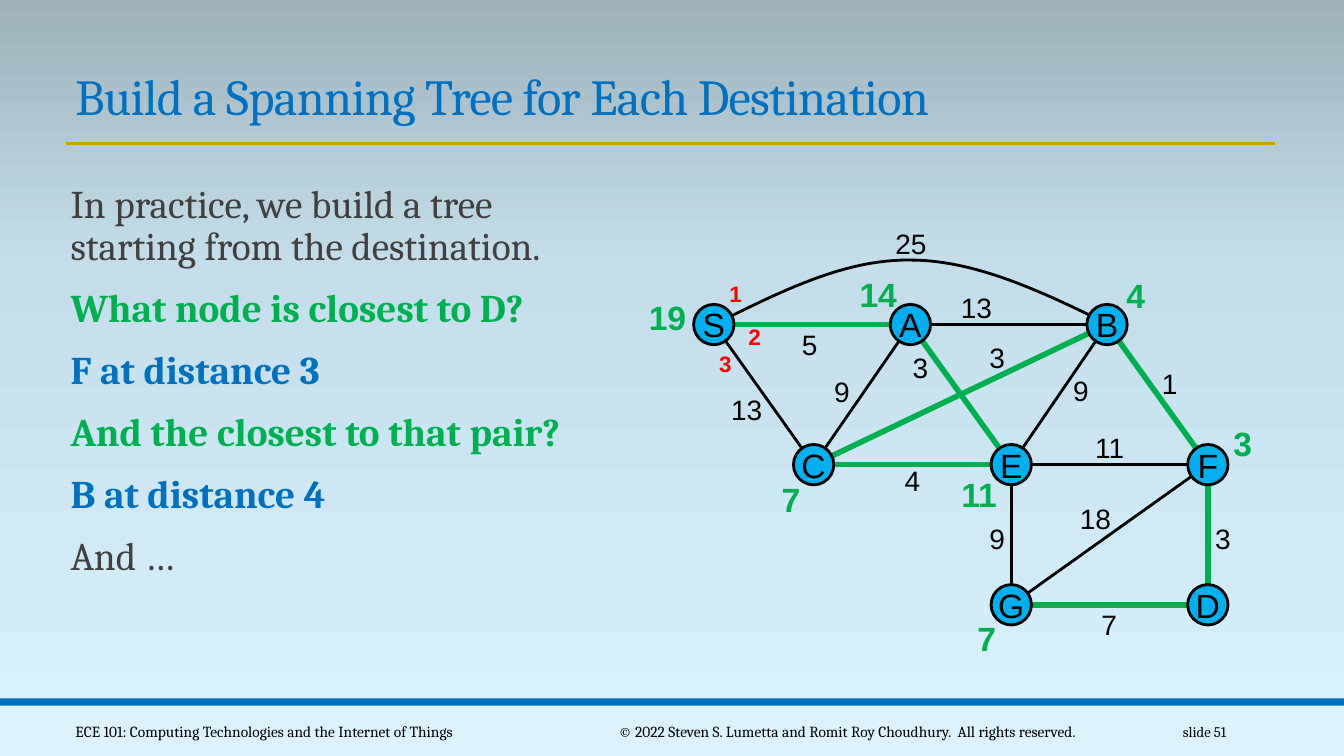
from copy import deepcopy
from typing import NamedTuple

from pptx import Presentation
from pptx import util as u
from pptx.dml.color import RGBColor
from pptx.enum import shapes, text
from pptx.oxml import ns, xmlchemy

BLACK, BLUE, GREEN, RED, GRAY = "000000", "0070C0", "00B050", "FF0000", "404040"
GOLD, NODE_FILL, FOOTER_FILL = "D09E00", "00B0F0", "DCF3FD"
NODE_SIZE = 0.4
LEFT, CENTER, RIGHT = text.PP_ALIGN.LEFT, text.PP_ALIGN.CENTER, text.PP_ALIGN.RIGHT
TOP, MIDDLE, BOTTOM = text.MSO_ANCHOR.TOP, text.MSO_ANCHOR.MIDDLE, text.MSO_ANCHOR.BOTTOM


class Point(NamedTuple):
    x: float
    y: float


class Box(NamedTuple):
    left: float
    top: float
    width: float
    height: float


class Line(NamedTuple):
    words: str
    color: str
    bold: bool = False


class Label(NamedTuple):
    words: str
    left: float
    top: float


class LabelStyle(NamedTuple):
    size: float
    color: str
    bold: bool
    one_digit: float
    two_digits: float
    height: float


NODES = {
    "E": Point(10.03, 4.61), "C": Point(8.07, 4.61), "F": Point(11.98, 4.61),
    "G": Point(10.03, 6), "D": Point(11.98, 6),
    "S": Point(7.08, 3.22), "B": Point(10.98, 3.22), "A": Point(9.03, 3.22),
}
OTHER_EDGES = ["AB", "SC", "AC", "BE", "EF", "EG", "FG"]
TREE_EDGES = ["DF", "FB", "DG", "BC", "CE", "EA", "AS"]

SB_CURVES = [
    [Point(7.08, 3.22), Point(7.73, 2.9), Point(8.37, 2.57), Point(9.03, 2.58)],
    [Point(9.03, 2.58), Point(9.68, 2.58), Point(10.35, 2.9), Point(11.02, 3.23)],
]

PORT_STYLE = LabelStyle(16, RED, True, 0.33, 0.33, 0.37)
WEIGHT_STYLE = LabelStyle(20, BLACK, False, 0.36, 0.51, 0.44)
DISTANCE_STYLE = LabelStyle(24, GREEN, True, 0.39, 0.58, 0.5)

PORTS = [Label("1", 7.13, 2.73), Label("2", 7.32, 3.16), Label("3", 7.03, 3.42)]
WEIGHTS = [
    Label("25", 8.78, 2.2), Label("5", 7.85, 3.2), Label("13", 9.43, 2.83),
    Label("13", 7.15, 3.84), Label("4", 8.87, 4.55), Label("11", 10.75, 4.22),
    Label("18", 10.61, 4.93), Label("7", 10.82, 5.98), Label("3", 11.95, 5.12),
    Label("3", 9.71, 3.33), Label("3", 8.95, 3.43), Label("9", 8.17, 3.67),
    Label("9", 10.54, 3.66), Label("1", 11.42, 3.59), Label("9", 9.71, 5.12),
]
DISTANCES = [
    Label("3", 12.13, 4.15), Label("4", 11.07, 2.68), Label("7", 9.59, 6.08),
    Label("7", 7.65, 4.7), Label("11", 9.42, 4.65), Label("14", 8.42, 2.67),
    Label("19", 6.33, 2.9),
]

STEPS = [
    Line("In practice, we build a tree\vstarting from the destination.", GRAY),
    Line("What node is closest to D?", GREEN, True),
    Line("F at distance 3", BLUE, True),
    Line("And the closest to that pair?", GREEN, True),
    Line("B at distance 4", BLUE, True),
    Line("And …", GRAY),
]


def rgb(color: str) -> RGBColor:
    return RGBColor.from_string(color)


def write(frame, lines: list[Line], *, size: float, font: str = "Cambria",
          align=LEFT, anchor=TOP, wrap: bool = True, inset: tuple = (0.1, 0.05),
          spacing: float = 1, before: float = 0, after: float = 0,
          tracking: float = 0) -> None:
    """Fill a text frame, one paragraph for each line."""
    frame.word_wrap = wrap
    frame.vertical_anchor = anchor
    frame.margin_left = frame.margin_right = u.Inches(inset[0])
    frame.margin_top = frame.margin_bottom = u.Inches(inset[1])
    for index, line in enumerate(lines):
        paragraph = frame.add_paragraph() if index else frame.paragraphs[0]
        paragraph.text = line.words
        paragraph.alignment = align
        paragraph.line_spacing = spacing
        paragraph.space_before = u.Pt(before if index else 0)
        paragraph.space_after = u.Pt(after)
        for run in paragraph.runs:
            run.font.name, run.font.size = font, u.Pt(size)
            run.font.bold = line.bold
            run.font.color.rgb = rgb(line.color)
            if tracking:
                run.font._element.set("spc", str(round(tracking * 100)))


def add_text(slide, box: Box, lines: list[Line], **style) -> None:
    area = slide.shapes.add_textbox(*map(u.Inches, box))
    write(area.text_frame, lines, **style)


def add_labels(slide, labels: list[Label], style: LabelStyle) -> None:
    for label in labels:
        width = style.one_digit if len(label.words) == 1 else style.two_digits
        add_text(slide, Box(label.left, label.top, width, style.height),
                 [Line(label.words, style.color, style.bold)],
                 size=style.size, font="Arial", align=CENTER, wrap=False)


def add_line(slide, start: Point, end: Point, color: str, width: float) -> None:
    line = slide.shapes.add_connector(shapes.MSO_CONNECTOR.STRAIGHT,
                                      *map(u.Inches, (*start, *end)))
    line.line.color.rgb = rgb(color)
    line.line.width = u.Pt(width)
    line._element.spPr.append(xmlchemy.OxmlElement("a:effectLst"))


def add_edges(slide, edges: list[str], color: str, width: float) -> None:
    for start, end in edges:
        add_line(slide, NODES[start], NODES[end], color, width)


def add_filled(slide, kind, box: Box, color: str):
    shape = slide.shapes.add_shape(kind, *map(u.Inches, box))
    shape.shadow.inherit = False
    shape.fill.solid()
    shape.fill.fore_color.rgb = rgb(color)
    shape.line.fill.background()
    return shape


def bezier(control: list[Point], t: float) -> tuple[int, int]:
    """Point on a cubic curve, in EMU."""
    factors = ((1 - t) ** 3, 3 * t * (1 - t) ** 2, 3 * t * t * (1 - t), t ** 3)
    return (u.Inches(sum(f * p.x for f, p in zip(factors, control))),
            u.Inches(sum(f * p.y for f, p in zip(factors, control))))


def add_arc(slide, steps: int = 24) -> None:
    points = [bezier(curve, i / steps) for curve in SB_CURVES for i in range(steps + 1)]
    builder = slide.shapes.build_freeform(*points[0])
    builder.add_line_segments(points[1:], close=False)
    arc = builder.convert_to_shape()
    arc.shadow.inherit = False
    arc.fill.background()
    arc.line.color.rgb = rgb(BLACK)
    arc.line.width = u.Pt(2)


def add_node(slide, name: str, center: Point) -> None:
    box = Box(center.x - NODE_SIZE / 2, center.y - NODE_SIZE / 2, NODE_SIZE, NODE_SIZE)
    node = add_filled(slide, shapes.MSO_SHAPE.OVAL, box, NODE_FILL)
    node.line.color.rgb = rgb(BLACK)
    node.line.width = u.Pt(2)
    write(node.text_frame, [Line(name, BLACK)], size=24, font="Arial",
          align=CENTER, anchor=MIDDLE, wrap=False, inset=(0, 0))


def paint_background(slide) -> None:
    fill = slide.background.fill
    fill.gradient()
    fill.gradient_angle = 90
    stop_list = slide._element.find(".//" + ns.qn("a:gsLst"))
    stop_list.insert(1, deepcopy(stop_list[0]))
    colors = [(0, "DAF4FF"), (0.65, "C3DEEA"), (1, "9DB2BA")]
    for stop, (position, color) in zip(fill.gradient_stops, colors):
        stop.position = position
        stop.color.rgb = rgb(color)


def main() -> None:
    deck = Presentation()
    deck.slide_width, deck.slide_height = u.Inches(13.33), u.Inches(7.5)
    slide = deck.slides.add_slide(deck.slide_layouts[6])
    paint_background(slide)
    for box, color in [(Box(0, 7, 13.33, 0.5), FOOTER_FILL), (Box(0, 6.93, 13.33, 0.07), BLUE)]:
        add_filled(slide, shapes.MSO_SHAPE.RECTANGLE, box, color)
    add_line(slide, Point(0.65, 1.42), Point(12.65, 1.42), GOLD, 2)

    add_text(slide, Box(0.65, 0.59, 12.01, 0.71),
             [Line("Build a Spanning Tree for Each Destination", BLUE)],
             size=36, anchor=BOTTOM, spacing=0.85, tracking=-0.5)
    add_text(slide, Box(0.7, 1.78, 8.42, 4.64), STEPS, size=28,
             inset=(0, 0.05), spacing=0.9, before=12, after=2)
    for words, left, width, size, align in [
        ("slide 51", 10.83, 1.43, 10.5, RIGHT),
        ("ECE 101: Computing Technologies and the Internet of Things", 0.65, 4.58, 11, LEFT),
        ("© 2022 Steven S. Lumetta and Romit Roy Choudhury.  All rights reserved.",
         5.46, 5.89, 11, CENTER),
    ]:
        add_text(slide, Box(left, 7.06, width, 0.4), [Line(words, BLACK)],
                 size=size, align=align, anchor=MIDDLE)

    add_edges(slide, OTHER_EDGES, BLACK, 2)
    add_arc(slide)
    add_labels(slide, PORTS, PORT_STYLE)
    add_labels(slide, WEIGHTS, WEIGHT_STYLE)
    add_edges(slide, TREE_EDGES, GREEN, 4)
    add_labels(slide, DISTANCES, DISTANCE_STYLE)
    for name, center in NODES.items():
        add_node(slide, name, center)
    deck.save("out.pptx")


if __name__ == "__main__":
    main()
